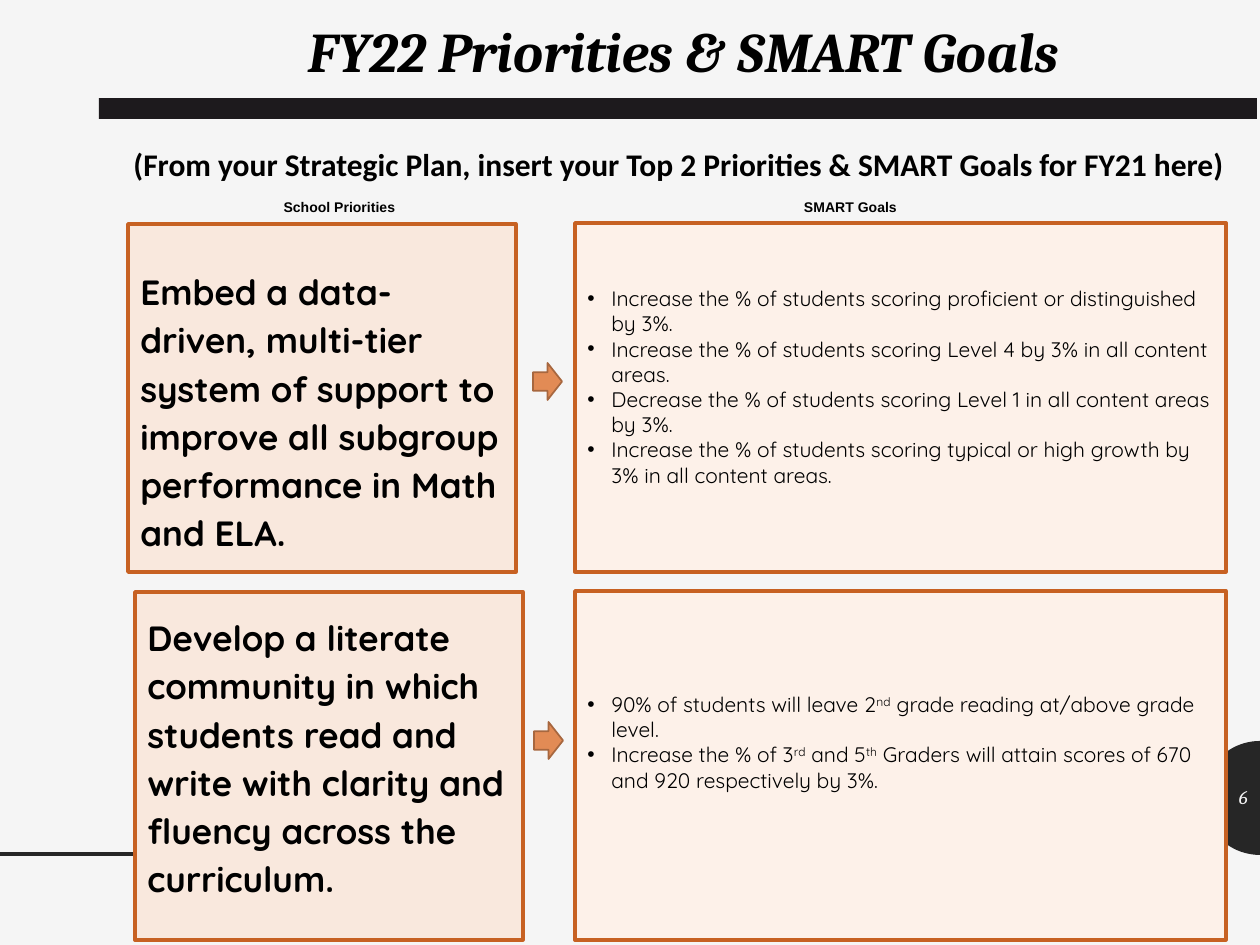
import math
from dataclasses import dataclass

from lxml import etree
from pptx import Presentation
from pptx.dml.color import RGBColor
from pptx.enum.shapes import MSO_CONNECTOR, MSO_SHAPE
from pptx.enum.text import MSO_ANCHOR, PP_ALIGN
from pptx.oxml.ns import qn
from pptx.util import Pt

PX = 914400 / 126

RECTANGLE = MSO_SHAPE.RECTANGLE
RIGHT_ARROW = MSO_SHAPE.RIGHT_ARROW
STRAIGHT = MSO_CONNECTOR.STRAIGHT
TOP, MIDDLE = MSO_ANCHOR.TOP, MSO_ANCHOR.MIDDLE
LEFT, CENTER, RIGHT = PP_ALIGN.LEFT, PP_ALIGN.CENTER, PP_ALIGN.RIGHT

PAPER = RGBColor(0xF5, 0xF5, 0xF5)
CHARCOAL = RGBColor(0x26, 0x26, 0x26)
BAR = RGBColor(0x1D, 0x1A, 0x1D)
BLACK = RGBColor(0, 0, 0)
RUST = RGBColor(0xC7, 0x61, 0x22)
PRIORITY_FILL = RGBColor(0xF9, 0xE8, 0xDD)
GOAL_FILL = RGBColor(0xFD, 0xF1, 0xE9)
ARROW_FILL = RGBColor(0xE2, 0x8B, 0x55)
ARROW_LINE = RGBColor(0xA7, 0x67, 0x3F)


@dataclass(frozen=True)
class Box:
    left: int
    top: int
    width: int
    height: int


@dataclass(frozen=True)
class Style:
    font: str
    size: int
    bold: bool = False
    italic: bool = False
    color: RGBColor = BLACK


@dataclass(frozen=True)
class Label:
    text: str
    box: Box
    style: Style
    align: PP_ALIGN = CENTER
    anchor: MSO_ANCHOR = TOP


@dataclass(frozen=True)
class PriorityRow:
    """Insets place the text; ^ marks surround superscripts in goals."""
    priority: str
    priority_box: Box
    priority_insets: tuple[int, int]
    arrow_box: Box
    goals: tuple[str, ...]
    goals_box: Box
    goals_insets: tuple[int, int]


PRIORITY_STYLE = Style("Quicksand", 20, bold=True)
GOAL_STYLE = Style("Quicksand", 12)
COLUMN_STYLE = Style("Arial", 8, bold=True)

LABELS = (
    Label("FY22 Priorities & SMART Goals", Box(121, 10, 1125, 81),
          Style("Cambria", 32, bold=True, italic=True)),
    Label("(From your Strategic Plan, insert your Top 2 Priorities & SMART Goals for FY21 here)",
          Box(98, 139, 1162, 89), Style("Calibri", 18, bold=True)),
    Label("School Priorities", Box(270, 192, 139, 30), COLUMN_STYLE),
    Label("SMART Goals", Box(769, 192, 163, 30), COLUMN_STYLE),
)
PAGE_NUMBER = Label("6", Box(1203, 772, 57, 50),
                    Style("Cambria", 11, italic=True, color=PAPER), RIGHT, MIDDLE)

ROWS = (
    PriorityRow(
        "Embed a data-driven, multi-tier system of support to improve all subgroup "
        "performance in Math and ELA.",
        Box(128, 224, 388, 348), (28, 6),
        Box(533, 363, 29, 37),
        ("Increase the % of students scoring proficient or distinguished by 3%.",
         "Increase the % of students scoring Level 4 by 3% in all content areas.",
         "Decrease the % of students scoring Level 1 in all content areas by 3%.",
         "Increase the % of students scoring typical or high growth by 3% in all content areas."),
        Box(575, 223, 651, 349), (6, 28)),
    PriorityRow(
        "Develop a literate community in which students read and write with clarity "
        "and fluency across the curriculum.",
        Box(135, 592, 388, 348), (6, 28),
        Box(534, 722, 29, 37),
        ("90% of students will leave 2^nd^ grade reading at/above grade level.",
         "Increase the % of 3^rd^ and 5^th^ Graders will attain scores of 670 "
         "and 920 respectively by 3%."),
        Box(575, 591, 651, 349), (6, 53)),
)


def px(length: float) -> int:
    return round(length * PX)


def place(box: Box) -> tuple[int, ...]:
    return tuple(px(n) for n in (box.left, box.top, box.width, box.height))


def style_runs(paragraph, style: Style) -> None:
    for run in paragraph.runs:
        font = run.font
        font.name, font.size = style.font, Pt(style.size)
        font.bold, font.italic = style.bold, style.italic
        font.color.rgb = style.color


def paint(shape, fill: RGBColor, line: RGBColor | None = None, width: float = 2) -> None:
    shape.shadow.inherit = False
    shape.fill.solid()
    shape.fill.fore_color.rgb = fill
    if line is None:
        shape.line.fill.background()
    else:
        shape.line.color.rgb = line
        shape.line.width = Pt(width)


def add_label(slide, label: Label) -> None:
    frame = slide.shapes.add_textbox(*place(label.box)).text_frame
    frame.word_wrap = True
    frame.vertical_anchor = label.anchor
    frame.text = label.text
    frame.paragraphs[0].alignment = label.align
    style_runs(frame.paragraphs[0], label.style)


def add_panel(slide, box: Box, fill: RGBColor, insets: tuple[int, int]):
    """Add an outlined panel and return its text frame."""
    panel = slide.shapes.add_shape(RECTANGLE, *place(box))
    paint(panel, fill, RUST)
    frame = panel.text_frame
    frame.word_wrap = True
    frame.vertical_anchor = MIDDLE
    frame.margin_top, frame.margin_bottom = (px(inset) for inset in insets)
    return frame


def add_bullet(paragraph) -> None:
    properties = paragraph._p.get_or_add_pPr()
    properties.set("marL", str(px(24)))
    properties.set("indent", str(-px(24)))
    bullet_color = etree.SubElement(properties, qn("a:buClr"))
    etree.SubElement(bullet_color, qn("a:srgbClr"), val=str(BLACK))
    etree.SubElement(properties, qn("a:buFont"), typeface="Arial")
    etree.SubElement(properties, qn("a:buChar"), char="•")


def add_goals(slide, row: PriorityRow) -> None:
    frame = add_panel(slide, row.goals_box, GOAL_FILL, row.goals_insets)
    for index, goal in enumerate(row.goals):
        paragraph = frame.add_paragraph() if index else frame.paragraphs[0]
        add_bullet(paragraph)
        paragraph.alignment = LEFT
        for part, text in enumerate(goal.split("^")):
            run = paragraph.add_run()
            run.text = text
            if part % 2:
                run.font._element.set("baseline", "30000")
        style_runs(paragraph, GOAL_STYLE)


def add_row(slide, row: PriorityRow) -> None:
    add_goals(slide, row)
    frame = add_panel(slide, row.priority_box, PRIORITY_FILL, row.priority_insets)
    frame.text = row.priority
    paragraph = frame.paragraphs[0]
    paragraph.alignment = LEFT
    paragraph.line_spacing = 1.15
    style_runs(paragraph, PRIORITY_STYLE)
    arrow = slide.shapes.add_shape(RIGHT_ARROW, *place(row.arrow_box))
    paint(arrow, ARROW_FILL, ARROW_LINE, 1)


def add_page_tab(slide, center_x: int, center_y: int, radius: int) -> None:
    """Add the half disc that bulges left from the slide's edge."""
    angles = [math.radians(degrees) for degrees in range(90, 271, 4)]
    points = [(px(center_x + radius * math.cos(a)), px(center_y - radius * math.sin(a)))
              for a in angles] + [(px(center_x), px(center_y + radius))]
    builder = slide.shapes.build_freeform(*points[0])
    builder.add_line_segments(points[1:], close=True)
    paint(builder.convert_to_shape(), CHARCOAL)


def add_rule(slide, y: int, end_x: int) -> None:
    rule = slide.shapes.add_connector(STRAIGHT, 0, px(y), px(end_x), px(y))
    rule.line.color.rgb = CHARCOAL
    rule.line.width = Pt(2)
    etree.SubElement(rule._element.spPr, qn("a:effectLst"))


def main() -> None:
    deck = Presentation()
    deck.slide_width, deck.slide_height = px(1260), px(945)
    slide = deck.slides.add_slide(deck.slide_layouts[6])
    slide.background.fill.solid()
    slide.background.fill.fore_color.rgb = PAPER
    add_page_tab(slide, 1260, 798, 57)
    add_rule(slide, 854, 465)
    paint(slide.shapes.add_shape(RECTANGLE, *place(Box(99, 98, 1158, 21))), BAR)
    for label in LABELS:
        add_label(slide, label)
    for row in ROWS:
        add_row(slide, row)
    add_label(slide, PAGE_NUMBER)
    deck.save("out.pptx")


if __name__ == "__main__":
    main()
